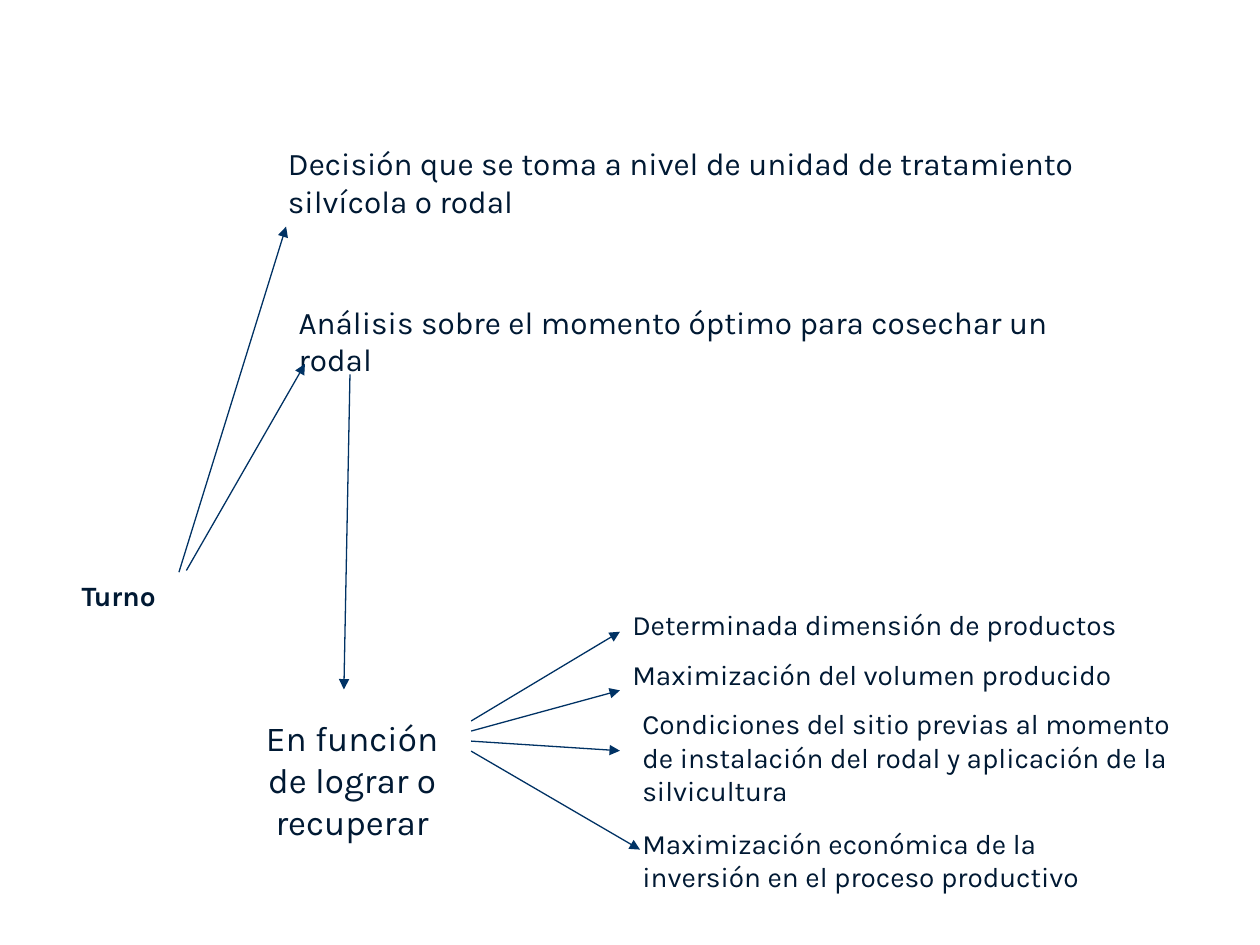
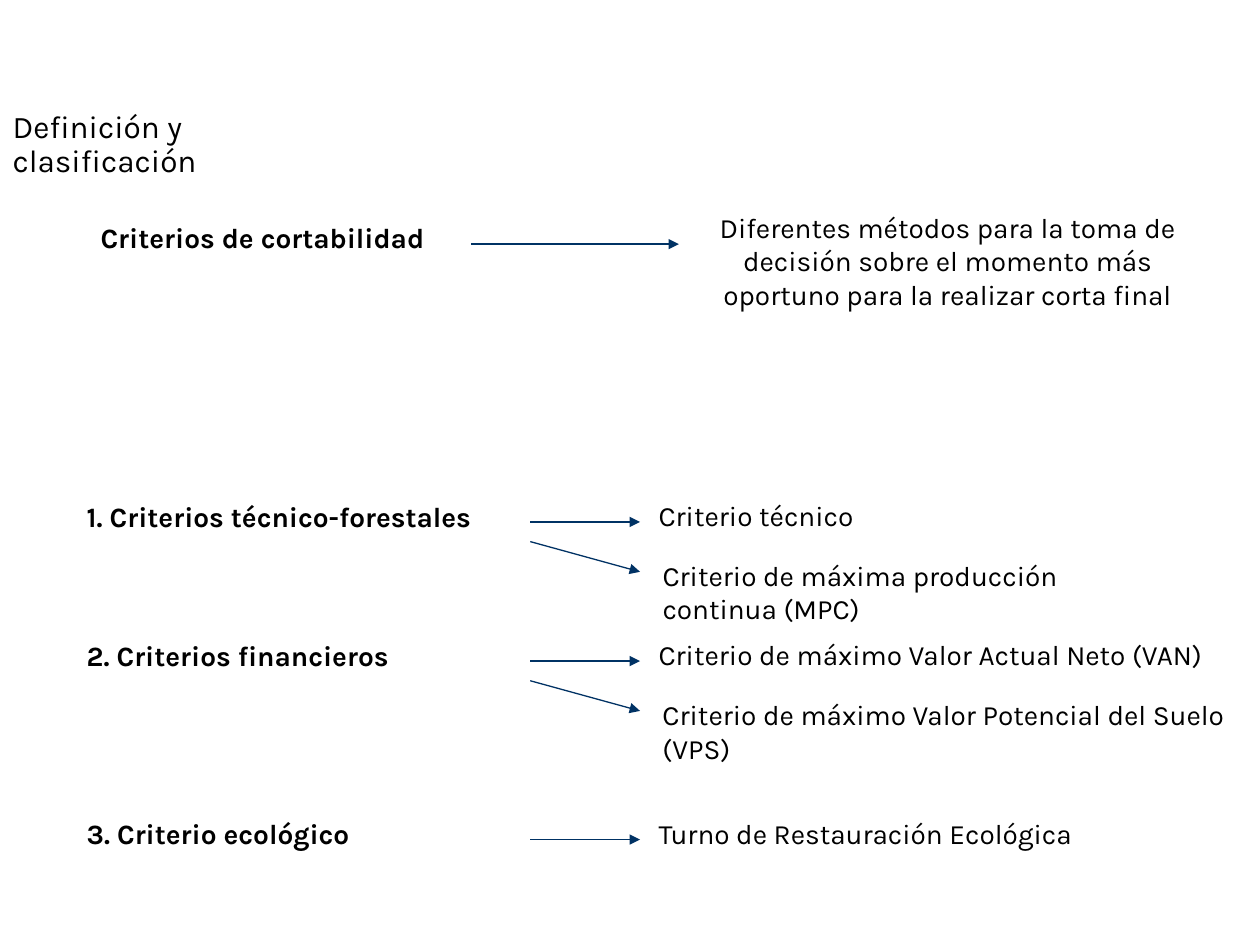
from pptx import Presentation
from pptx.dml.color import RGBColor
from pptx.enum.shapes import MSO_CONNECTOR, MSO_SHAPE
from pptx.enum.text import MSO_ANCHOR, PP_ALIGN
from pptx.oxml.ns import qn
from pptx.util import Pt
from lxml.etree import SubElement

NAVY = RGBColor(0x00, 0x19, 0x33)
BLUE = RGBColor(0x00, 0x32, 0x64)
BLACK = RGBColor(0, 0, 0)
WHITE = RGBColor(255, 255, 255)
FONT = "Karla"
BLANK, TITLE_ONLY = 6, 5

# Slide 1: (text, box, size, bold, alignment, anchor)
LEFT, MID = PP_ALIGN.LEFT, PP_ALIGN.CENTER
TOP, CENTER = MSO_ANCHOR.TOP, MSO_ANCHOR.MIDDLE
IDEAS = [
    ("Turno", (39.5, 327, 62, 26.5), 16, True, LEFT, CENTER),
    ("Decisión que se toma a nivel de unidad de tratamiento silvícola o rodal",
     (157.5, 78.5, 495.5, 51), 18, False, LEFT, CENTER),
    ("Análisis sobre el momento óptimo para cosechar un rodal",
     (163.5, 169, 480, 51), 18, False, LEFT, CENTER),
    ("En función de lograr o recuperar",
     (139, 406, 124.5, 80), 20, False, MID, TOP),
]
LINKS = [
    ((102.25, 327), (163.5, 129.5)),
    ((106.5, 326), (174.25, 208)),
    ((200, 214), (196.5, 394)),
]
# Goals: (text, box, arrow tip)
GOALS = [
    ("Determinada dimensión de productos",
     (354.25, 343.5, 317.5, 26.5), (354.25, 361)),
    ("Maximización del volumen producido",
     (354.25, 372, 365.75, 26.5), (354.25, 394.5)),
    ("Condiciones del sitio previas al momento de instalación del rodal "
     "y aplicación de la silvicultura",
     (360, 400.25, 335, 65.5), (354.25, 429)),
    ("Maximización económica de la inversión en el proceso productivo",
     (360, 468.5, 283.5, 46), (365.75, 485.5)),
]
FAN_X, FAN_Y, FAN_STEP = 269.25, 412, 5.75

# Slide 2
TITLE = "Definición y clasificación"
TERM = ("Criterios de cortabilidad", (42.5, 122.5, 215, 27.5), True)
MEANING = ("Diferentes métodos para la toma de decisión sobre el momento más "
           "oportuno para la realizar corta final",
           (399.5, 116.5, 284, 65.5), False)
# Criteria: (top, label, [(text, width), ...])
GROUPS = [
    (281.5, "1. Criterios técnico-forestales",
     [("Criterio técnico", 204),
      ("Criterio de máxima producción continua (MPC)", 298)]),
    (361, "2. Criterios financieros",
     [("Criterio de máximo Valor Actual Neto (VAN)", 340),
      ("Criterio de máximo Valor Potencial del Suelo (VPS)", 340)]),
    (463, "3. Criterio ecológico",
     [("Turno de Restauración Ecológica", 329)]),
]
# For each place in a group: text left, text drop, height, arrow start and end drop
PLACES = [(369.25, 0, 26.5, 16.75, 16.75), (371.5, 34, 46, 28, 45.25)]
LABEL_X, LABEL_W, ARROW_X, ARROW_END = 42.5, 258, 303, 365.75


def write(shape, text, size=16, color=BLACK, bold=False, align=LEFT, anchor=TOP):
    frame = shape.text_frame
    frame.word_wrap = True
    frame.vertical_anchor = anchor
    para = frame.paragraphs[0]
    para.alignment = align
    run = para.add_run()
    run.text = text
    font = run.font
    font.name, font.size, font.bold = FONT, Pt(size), bold
    font.color.rgb = color
    return para


def add_text(slide, text, box, *style):
    write(slide.shapes.add_textbox(*map(Pt, box)), text, *style)


def add_box(slide, text, box, bold):
    shape = slide.shapes.add_shape(MSO_SHAPE.RECTANGLE, *map(Pt, box))
    shape.shadow.inherit = False
    shape.fill.background()
    shape.line.color.rgb = WHITE
    shape.line.width = Pt(0.75)
    write(shape, text, 16, BLACK, bold, MID)


def add_arrow(slide, start, end):
    line = slide.shapes.add_connector(
        MSO_CONNECTOR.STRAIGHT, *map(Pt, start + end))
    line.line.color.rgb = BLUE
    line.line.width = Pt(0.75)
    SubElement(line.line._get_or_add_ln(), qn("a:tailEnd"), type="triangle")
    SubElement(line._element.spPr, qn("a:effectLst"))


def draw_turn(deck):
    slide = deck.slides.add_slide(deck.slide_layouts[BLANK])
    for text, box, size, *style in IDEAS:
        add_text(slide, text, box, size, NAVY, *style)
    for start, end in LINKS:
        add_arrow(slide, start, end)
    for i, (text, box, tip) in enumerate(GOALS):
        add_text(slide, text, box, 16, NAVY)
        add_arrow(slide, (FAN_X, FAN_Y + i * FAN_STEP), tip)


def draw_criteria(deck):
    slide = deck.slides.add_slide(deck.slide_layouts[TITLE_ONLY])
    title = slide.shapes.title
    title.left, title.top, title.width, title.height = map(Pt, (0, 59.75, 206.5, 47))
    write(title, TITLE, 18).line_spacing = 0.9
    add_box(slide, *TERM)
    add_box(slide, *MEANING)
    add_arrow(slide, (269.25, 139.5), (388, 139.5))
    for top, label, items in GROUPS:
        add_text(slide, label, (LABEL_X, top, LABEL_W, 26.5),
                 16, BLACK, True, LEFT, CENTER)
        for (text, width), (left, drop, height, out, tip) in zip(items, PLACES):
            add_text(slide, text, (left, top + drop, width, height))
            add_arrow(slide, (ARROW_X, top + out), (ARROW_END, top + tip))


def main():
    deck = Presentation()
    deck.slide_width, deck.slide_height = Pt(720), Pt(540)
    draw_turn(deck)
    draw_criteria(deck)
    deck.save("out.pptx")


if __name__ == "__main__":
    main()
